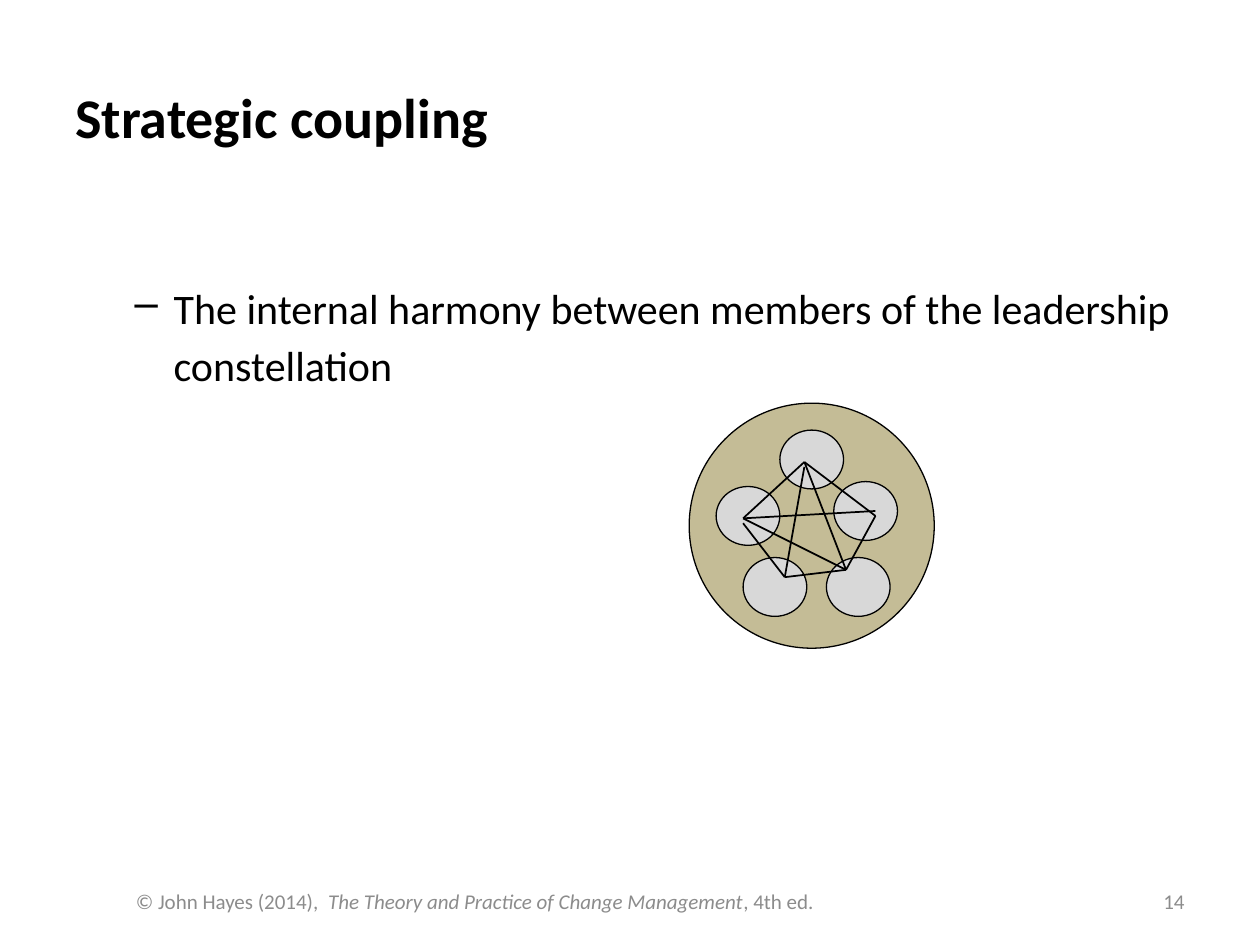
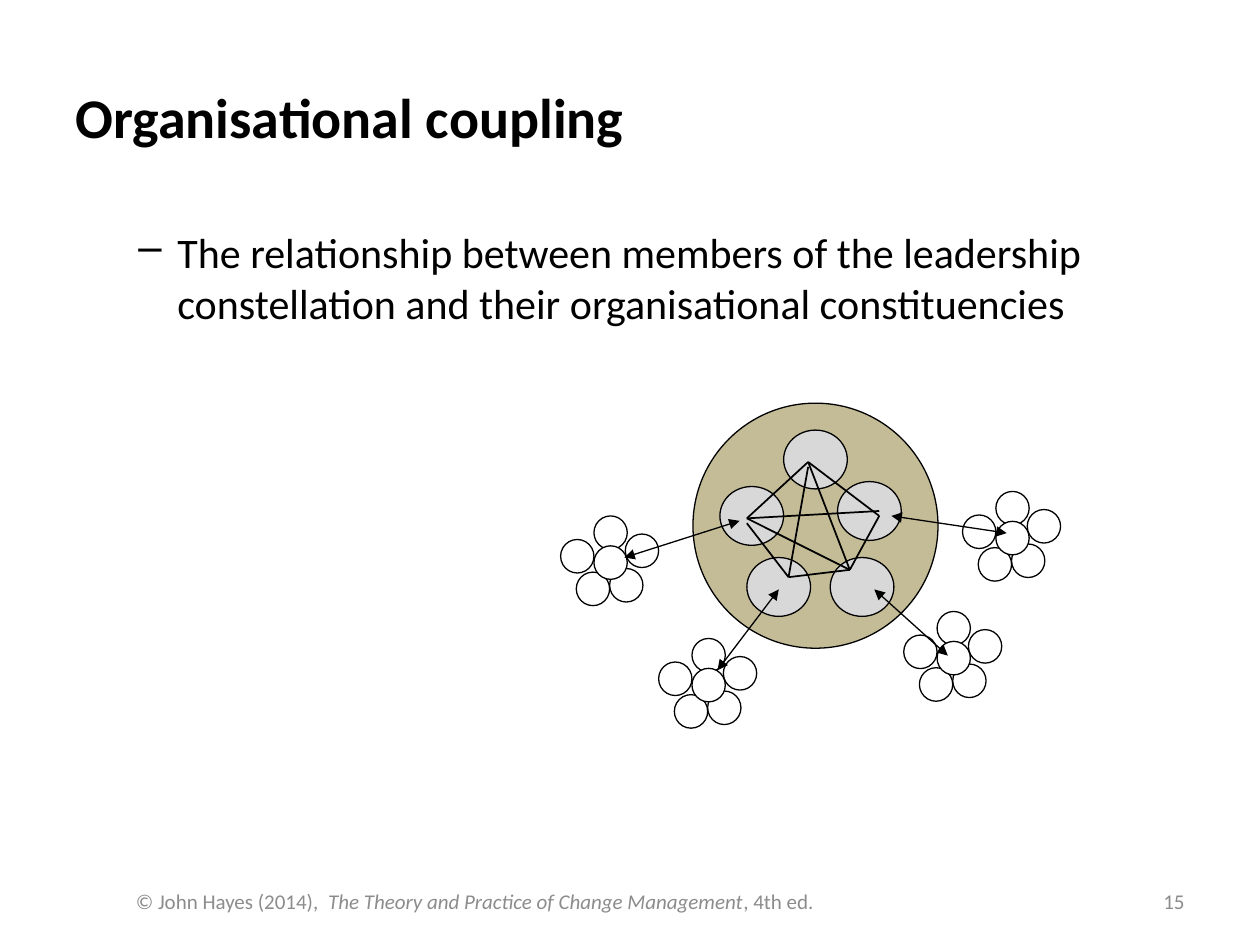
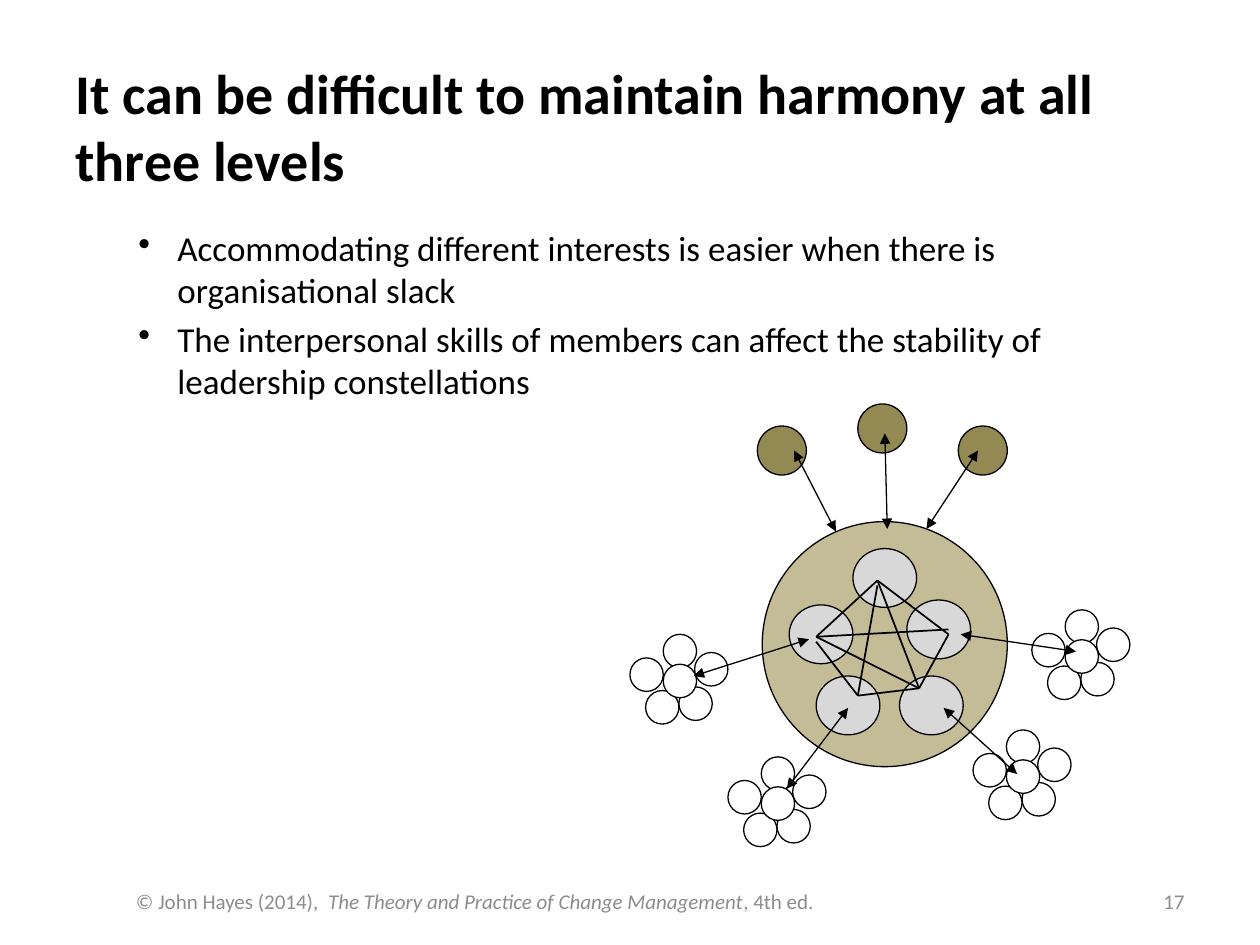
from lxml import etree
from pptx import Presentation
from pptx.dml.color import RGBColor
from pptx.enum.shapes import MSO_CONNECTOR, MSO_SHAPE
from pptx.enum.text import MSO_ANCHOR, PP_ALIGN
from pptx.oxml.ns import qn
from pptx.util import Inches, Pt

OVAL, STRAIGHT = MSO_SHAPE.OVAL, MSO_CONNECTOR.STRAIGHT
TOP, MIDDLE = MSO_ANCHOR.TOP, MSO_ANCHOR.MIDDLE
LEFT, RIGHT = PP_ALIGN.LEFT, PP_ALIGN.RIGHT
FONT = "Calibri"
COLORS = {"ink": "000000", "footer": "8C8C8C", "team": "C4BC96",
          "member": "D8D8D8", "constituent": "FFFFFF", "outsider": "938953"}

COLS, ROWS = 20, 15
CELL = Inches(0.5)
TITLE_BOX = (1, 0.6, 18, 2.5)
BODY_BOX = (1, 3.5, 18, 9.9)
FOOTER_BOX = (1.96, 13.9, 15.28, 0.8)
NUMBER_BOX = (14.34, 13.9, 4.66, 0.8)
TEAM_SIZE = 3.89

FOOTER = [("© John Hayes (2014),  ", False),
          ("The Theory and Practice of Change Management", True),
          (", 4th ed.", False)]

MEMBER_SIZE = (0.26, 0.24)
MEMBERS = [(0.37, 0.11), (0.59, 0.32), (0.11, 0.34), (0.22, 0.63), (0.56, 0.63)]
NODES = {"top": (0.47, 0.24), "top_low": (0.47, 0.26),
         "left": (0.22, 0.47), "left_low": (0.22, 0.49),
         "right": (0.76, 0.46), "right_high": (0.76, 0.44),
         "foot_left": (0.39, 0.71), "foot_right": (0.64, 0.68)}
TIES = [("top_low", "foot_left"), ("top", "foot_right"), ("left", "right_high"),
        ("left", "foot_right"), ("left_low", "foot_left"), ("left", "top"),
        ("top", "right"), ("right", "foot_right"), ("foot_left", "foot_right")]

CLUSTER_SIZE = (0.4, 0.37)
CLUSTERS = [(-0.54, 0.46), (-0.14, 0.96), (1.1, 0.36), (0.86, 0.85)]
CLUSTER_LINKS = [((-0.28, 0.63), (0.19, 0.48)), ((1.04, 1.03), (0.74, 0.76)),
                 ((0.1, 1.09), (0.35, 0.76)), ((0.81, 0.46), (1.28, 0.53))]
PETAL_SIZE = (0.34, 0.37)
PETALS = [(0.34, 0), (0.66, 0.2), (0, 0.26), (0.5, 0.58), (0.16, 0.62), (0.34, 0.33)]

OUTSIDER_SIZE = (0.2, 0.2)
OUTSIDERS = [(0.39, -0.48), (0.8, -0.39), (-0.02, -0.39)]
OUTSIDER_LINKS = [((0.5, -0.36), (0.51, 0.03)), ((0.88, -0.29), (0.67, 0.03)),
                  ((0.13, -0.29), (0.3, 0.04))]


def rgb(name):
    """Return the named colour."""
    return RGBColor.from_string(COLORS[name])


def cells(*values):
    """Turn grid cells into lengths."""
    return [round(v * CELL) for v in values]


def within(box, point, size=(0, 0)):
    """Return the part of a box given by shares of its size."""
    x, y, w, h = box
    return x + point[0] * w, y + point[1] * h, size[0] * w, size[1] * h


def add_box(s, box, anchor):
    """Add an empty wrapping text box and return its text frame."""
    tf = s.shapes.add_textbox(*cells(*box)).text_frame
    tf.word_wrap = True
    tf.vertical_anchor = anchor
    return tf


def style(p, size, color="ink", bold=False, align=LEFT):
    """Set the font and alignment of a paragraph."""
    p.alignment = align
    p.font.name, p.font.size, p.font.bold = FONT, Pt(size), bold
    p.font.color.rgb = rgb(color)


def add_line_text(s, box, text, size, **look):
    """Add a text box with one vertically centred paragraph."""
    p = add_box(s, box, MIDDLE).paragraphs[0]
    p.text = text
    style(p, size, **look)


def add_bullets(s, box, items, bullet, size, end_size=None):
    """Add bulleted paragraphs, with a taller closing space if asked."""
    tf = add_box(s, box, TOP)
    for i, item in enumerate(items):
        p = tf.add_paragraph() if i else tf.paragraphs[0]
        p.add_run().text = item
        style(p, size)
        p.space_before = Pt(size * 0.2 if i else 0)
        if end_size:
            r = p.add_run()
            r.text, r.font.size = " ", Pt(end_size)
        pPr = p._p.get_or_add_pPr()
        pPr.set("marL", str(Inches(0.81)))
        pPr.set("indent", str(Inches(-0.31)))
        mark = etree.Element(qn("a:buChar"), char=bullet)
        pPr.find(qn("a:defRPr")).addprevious(mark)


def add_footer(s, number):
    """Add the slide number and the source line."""
    add_line_text(s, NUMBER_BOX, str(number), 12, color="footer", align=RIGHT)
    p = add_box(s, FOOTER_BOX, MIDDLE).paragraphs[0]
    style(p, 12, "footer")
    for text, italic in FOOTER:
        r = p.add_run()
        r.text, r.font.italic = text, italic


def add_oval(s, box, color):
    """Add a filled, thinly outlined ellipse."""
    sp = s.shapes.add_shape(OVAL, *cells(*box))
    sp.shadow.inherit = False
    sp.fill.solid()
    sp.fill.fore_color.rgb = rgb(color)
    sp.line.color.rgb = rgb("ink")
    sp.line.width = Pt(0.75)


def add_line(s, box, start, end, width=1, arrows=False):
    """Join two points of a box, with arrowheads at both ends if asked."""
    ends = within(box, start)[:2] + within(box, end)[:2]
    cn = s.shapes.add_connector(STRAIGHT, *cells(*ends))
    cn.line.color.rgb = rgb("ink")
    cn.line.width = Pt(width)
    if arrows:
        ln = cn.line._get_or_add_ln()
        for tag in ("a:headEnd", "a:tailEnd"):
            etree.SubElement(ln, qn(tag), type="triangle")
    etree.SubElement(cn._element.spPr, qn("a:effectLst"))


def add_links(s, box, links):
    """Add two-headed arrows between pairs of points."""
    for start, end in links:
        add_line(s, box, start, end, 0.75, arrows=True)


def add_ovals(s, box, points, size, color):
    """Add equal ellipses at points of a box."""
    for point in points:
        add_oval(s, within(box, point, size), color)


def add_constellation(s, box, clusters=False, outsiders=False):
    """Draw the leadership team, its ties and its outer relations."""
    add_oval(s, box, "team")
    add_ovals(s, box, MEMBERS, MEMBER_SIZE, "member")
    if clusters:
        for point in CLUSTERS:
            add_ovals(s, within(box, point, CLUSTER_SIZE), PETALS, PETAL_SIZE, "constituent")
        add_links(s, box, CLUSTER_LINKS)
    for start, end in TIES:
        add_line(s, box, NODES[start], NODES[end])
    if outsiders:
        add_ovals(s, box, OUTSIDERS, OUTSIDER_SIZE, "outsider")
        add_links(s, box, OUTSIDER_LINKS)


def add_coupling_slide(prs, number, title, items, team_at, bullet="–", size=24,
                       title_box=TITLE_BOX, body_box=BODY_BOX, end_size=None, **relations):
    """Build a slide with a title, bullets, a constellation and a footer."""
    s = prs.slides.add_slide(prs.slide_layouts[6])
    add_line_text(s, title_box, title, 32, bold=True)
    add_bullets(s, body_box, items, bullet, size, end_size)
    add_constellation(s, (*team_at, TEAM_SIZE, TEAM_SIZE), **relations)
    add_footer(s, number)


def main():
    """Build and save the deck."""
    prs = Presentation()
    prs.slide_width, prs.slide_height = cells(COLS, ROWS)
    add_coupling_slide(
        prs, 14, "Strategic coupling",
        ["The internal harmony between members of the leadership constellation"],
        (10.94, 6.4), body_box=(0.94, 4.38, 18, 7.38), end_size=28)
    add_coupling_slide(
        prs, 15, "Organisational coupling",
        ["The relationship between members of the leadership constellation "
         "and their organisational constituencies"],
        (11, 6.4), clusters=True)
    add_coupling_slide(
        prs, 17, "It can be difficult to maintain harmony at all three levels",
        ["Accommodating different interests is easier when there is organisational slack",
         "The interpersonal skills of members can affect the stability of "
         "leadership constellations"],
        (12.1, 8.28), bullet="•", size=20, title_box=(1, 0.74, 18, 2.5),
        clusters=True, outsiders=True)
    prs.save("out.pptx")


if __name__ == "__main__":
    main()
